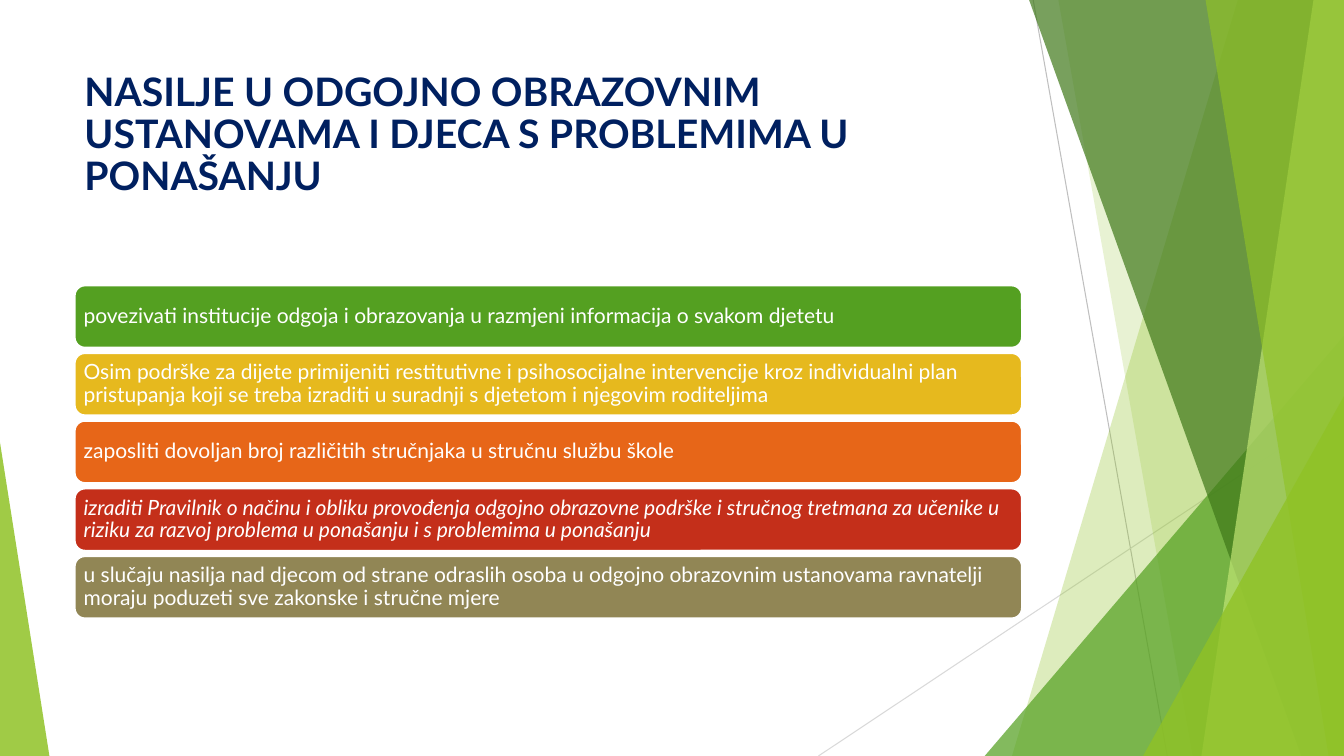
from lxml import etree
from pptx import Presentation
from pptx.dml.color import RGBColor
from pptx.enum.shapes import MSO_CONNECTOR, MSO_SHAPE
from pptx.enum.text import MSO_ANCHOR, PP_ALIGN
from pptx.oxml.ns import qn
from pptx.util import Pt

WIDTH, HEIGHT = 960, 540
FONT = "Lato"
COLORS = {
    "white": "FFFFFF", "navy": "002060",
    "lime": "90C226", "pale": "C0E474", "green": "54A021", "forest": "3F7819",
    "yellow": "E6B91E", "orange": "E76618", "red": "C42F1A", "olive": "918655",
    "grey": "BFBFBF", "light_grey": "D9D9D9",
}
TITLE = "NASILJE U ODGOJNO OBRAZOVNIM USTANOVAMA I DJECA S PROBLEMIMA U PONAŠANJU"
MEASURES = [
    ("green", False, "povezivati institucije odgoja i obrazovanja u razmjeni informacija o svakom djetetu"),
    ("yellow", False, "Osim podrške za dijete primijeniti restitutivne i psihosocijalne intervencije kroz "
     "individualni plan pristupanja koji se treba izraditi u suradnji s djetetom i njegovim roditeljima"),
    ("orange", False, "zaposliti dovoljan broj različitih stručnjaka u stručnu službu škole"),
    ("red", True, "izraditi Pravilnik o načinu i obliku provođenja odgojno obrazovne podrške i stručnog "
     "tretmana za učenike u riziku za razvoj problema u ponašanju i s problemima u ponašanju"),
    ("olive", False, "u slučaju nasilja nad djecom od strane odraslih osoba u odgojno obrazovnim "
     "ustanovama ravnatelji moraju poduzeti sve zakonske i stručne mjere"),
]
BAND_LEFT, BAND_TOP, BAND_WIDTH, BAND_HEIGHT, BAND_PITCH = 53.3, 203.8, 676.8, 44.6, 48.35


def rgb(color):
    return RGBColor.from_string(COLORS[color])


def paint(shape, color, opacity=100):
    """Give the shape a plain fill, with no outline and no shadow."""
    shape.shadow.inherit = False
    shape.line.fill.background()
    shape.fill.solid()
    shape.fill.fore_color.rgb = rgb(color)
    if opacity < 100:
        fill_color = shape.fill._xPr.find(qn("a:solidFill"))[0]
        etree.SubElement(fill_color, qn("a:alpha")).set("val", str(opacity * 1000))


def write_text(shape, text, size, color, bold=False, italic=False,
               anchor=MSO_ANCHOR.TOP, inset=(7.2, 3.6)):
    frame = shape.text_frame
    frame.word_wrap = True
    frame.vertical_anchor = anchor
    frame.margin_left = frame.margin_right = Pt(inset[0])
    frame.margin_top = frame.margin_bottom = Pt(inset[1])
    paragraph = frame.paragraphs[0]
    paragraph.alignment = PP_ALIGN.LEFT
    paragraph.line_spacing = 0.9
    run = paragraph.add_run()
    run.text = text
    run.font.name, run.font.size = FONT, Pt(size)
    run.font.bold, run.font.italic = bold, italic
    run.font.color.rgb = rgb(color)


def add_ray(slide, start, end, color):
    ray = slide.shapes.add_connector(MSO_CONNECTOR.STRAIGHT, *map(Pt, start + end))
    ray.line.color.rgb = rgb(color)
    ray.line.width = Pt(0.75)
    etree.SubElement(ray._element.spPr, qn("a:effectLst"))


def add_blade(slide, top_x, bottom_x, color, opacity):
    """Fill from a slanted left edge to the right side of the slide."""
    builder = slide.shapes.build_freeform(Pt(top_x), Pt(0))
    corners = [(WIDTH, 0), (WIDTH, HEIGHT), (bottom_x, HEIGHT)]
    builder.add_line_segments([(Pt(x), Pt(y)) for x, y in corners])
    paint(builder.convert_to_shape(), color, opacity)


def add_corner(slide, left, top, width, apex, color, opacity):
    """Add a triangle standing on the bottom edge; apex 0 is left, 1 is right."""
    corner = slide.shapes.add_shape(MSO_SHAPE.ISOSCELES_TRIANGLE, Pt(left), Pt(top),
                                    Pt(width), Pt(HEIGHT - top))
    corner.adjustments[0] = apex
    paint(corner, color, opacity)


def add_facets(slide):
    add_ray(slide, (738, 0), (833.8, HEIGHT), "grey")
    add_ray(slide, (WIDTH, 290.2), (584.6, HEIGHT), "light_grey")
    add_blade(slide, 884.2, 722.9, "lime", 30)
    add_blade(slide, 756, 851.8, "lime", 20)
    add_corner(slide, 703.4, 239.8, 256.6, 1, "green", 72)
    add_blade(slide, 735.1, 929.5, "forest", 70)
    add_blade(slide, 938.2, 858.2, "pale", 70)
    add_blade(slide, 861.1, 949, "lime", 65)
    add_corner(slide, 816.5, 283, 143.5, 1, "lime", 80)
    add_corner(slide, 0, 316.1, 35.3, 0, "lime", 85)


def add_title(slide):
    box = slide.shapes.add_textbox(Pt(BAND_LEFT), Pt(48.2), Pt(BAND_WIDTH), Pt(103.7))
    write_text(box, TITLE, 28, "navy", bold=True)


def add_band(slide, row, color, italic, text):
    band = slide.shapes.add_shape(MSO_SHAPE.ROUNDED_RECTANGLE, Pt(BAND_LEFT),
                                  Pt(BAND_TOP + row * BAND_PITCH), Pt(BAND_WIDTH), Pt(BAND_HEIGHT))
    paint(band, color)
    band.line.color.rgb = rgb("white")
    band.line.width = Pt(1.5)
    write_text(band, text, 15, "white", italic=italic, anchor=MSO_ANCHOR.MIDDLE, inset=(4.3, 4.3))


def main():
    presentation = Presentation()
    presentation.slide_width, presentation.slide_height = Pt(WIDTH), Pt(HEIGHT)
    slide = presentation.slides.add_slide(presentation.slide_layouts[6])
    add_facets(slide)
    add_title(slide)
    for row, measure in enumerate(MEASURES):
        add_band(slide, row, *measure)
    presentation.save("out.pptx")


if __name__ == "__main__":
    main()
